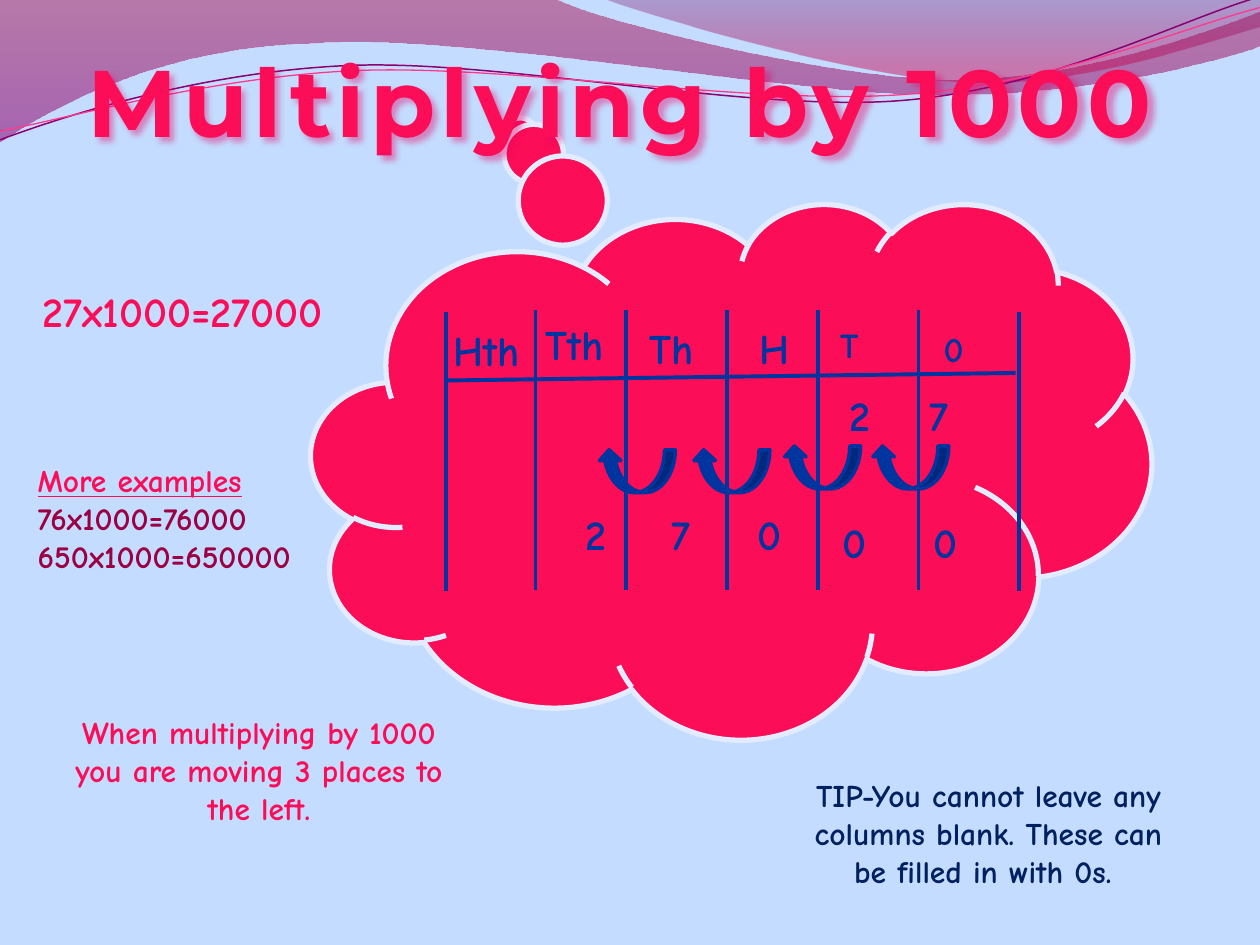
from dataclasses import dataclass
from math import cos, radians, sin

from lxml import etree
from pptx import Presentation
from pptx.dml.color import RGBColor
from pptx.enum.shapes import MSO_CONNECTOR, MSO_SHAPE
from pptx.enum.text import MSO_ANCHOR, MSO_AUTO_SIZE, PP_ALIGN
from pptx.oxml import parse_xml
from pptx.oxml.ns import nsdecls, qn
from pptx.util import Inches, Pt

STRAIGHT = MSO_CONNECTOR.STRAIGHT
CLOUD = MSO_SHAPE.CLOUD_CALLOUT
CURVED_ARROW = MSO_SHAPE.CURVED_UP_ARROW
LEFT, CENTER = PP_ALIGN.LEFT, PP_ALIGN.CENTER
TOP = MSO_ANCHOR.TOP
GROW = MSO_AUTO_SIZE.SHAPE_TO_FIT_TEXT


@dataclass(frozen=True)
class Theme:
    sky: str = "C3DCFF"
    pink: str = "FB0D57"
    cloud_edge: str = "E3ECFF"
    blue: str = "00349E"
    navy: str = "002060"
    plum: str = "9C0042"
    title_edge: str = "E90062"
    violet_line: str = "8A0070"
    rose_line: str = "FF388C"
    body_font: str = "Comic Neue"
    title_font: str = "Montserrat"
    title: int = 54
    digit: int = 24
    small_digit: int = 20
    note: int = 18


THEME = Theme()

BROAD_WAVE = [
    [(0, 0)], [(4.4, -0.01)],
    [(4.76, 0.17), (6.64, 0.63), (7.58, 0.63)],
    [(8.53, 0.63), (9.58, 0.26), (10, 0.09)], [(10.01, 0.36)],
    [(9.83, 0.44), (8.7, 0.76), (7.46, 0.75)],
    [(6.22, 0.75), (3.82, 0.28), (2.57, 0.34)],
    [(1.29, 0.36), (0.46, 0.83), (-0.01, 1.13)], [(0, 0)],
]
CORNER_WAVE = [
    [(4.79, -0.01)],
    [(5.09, 0.11), (6.82, 0.62), (7.69, 0.65)],
    [(8.56, 0.69), (9.61, 0.32), (10, 0.21)], [(10, 0)], [(4.79, -0.01)],
]
VIOLET_STRAND = [
    [(0, 1.11)],
    [(0.48, 0.93), (1.58, 0.57), (2.77, 0.52)],
    [(3.95, 0.47), (5.93, 0.89), (7.13, 0.8)],
    [(8.33, 0.71), (9.38, 0.15), (9.98, -0.02)],
]
ROSE_STRAND = [
    [(0, 1.04)],
    [(0.47, 0.96), (1.64, 0.61), (2.83, 0.56)],
    [(4.03, 0.51), (5.97, 0.84), (7.17, 0.75)],
    [(8.36, 0.67), (9.41, 0.21), (10, 0.06)],
]
STRAND_TILT = 2.7
STRAND_CENTER = (4.99, 0.58)

COLUMN_EDGES = [3.54, 4.25, 4.97, 5.77, 6.49, 7.29, 8.09]
HEADINGS = [
    ("0", 7.39, 2.55, 0.62, THEME.small_digit),
    ("T", 6.57, 2.52, 0.79, THEME.small_digit),
    ("H", 5.93, 2.51, 0.62, THEME.digit),
    ("Th", 5.06, 2.51, 0.8, THEME.digit),
    ("Tth", 4.23, 2.48, 0.83, THEME.digit),
    ("Hth", 3.5, 2.53, 0.83, THEME.digit),
]
START_DIGITS = [("2", 6.64, 3.04), ("7", 7.28, 3.04)]
RESULT_DIGITS = [
    ("7", 5.23, 3.99), ("2", 4.55, 3.99), ("0", 5.91, 3.99),
    ("0", 6.59, 4.05), ("0", 7.31, 4.05),
]
MOVES = [(6.92, 3.54), (6.22, 3.54), (5.5, 3.57), (4.75, 3.57)]


def rgb(color):
    return RGBColor.from_string(color)


def set_line(line, color, width):
    line.color.rgb = rgb(color)
    line.width = Pt(width)


def level(point):
    angle = radians(STRAND_TILT)
    x, y = (value - middle for value, middle in zip(point, STRAND_CENTER))
    return (STRAND_CENTER[0] + x * cos(angle) - y * sin(angle),
            STRAND_CENTER[1] + x * sin(angle) + y * cos(angle))


def add_curve(shapes, segments, close):
    segments = [[(Inches(x), Inches(y)) for x, y in segment] for segment in segments]
    start, *ends = [segment[-1] for segment in segments]
    builder = shapes.build_freeform(*start)
    builder.add_line_segments(ends, close=close)
    curve = builder.convert_to_shape()
    curve.shadow.inherit = False
    for step, segment in zip(list(curve.element.iter(qn("a:lnTo"))), segments[1:]):
        if len(segment) == 3:
            bend = etree.Element(qn("a:cubicBezTo"))
            for x, y in segment:
                etree.SubElement(bend, qn("a:pt"), x=str(x - curve.left), y=str(y - curve.top))
            step.getparent().replace(step, bend)
    return curve


def add_wave(shapes, segments, stops):
    wave = add_curve(shapes, segments, True)
    wave.line.fill.background()
    wave.fill.gradient()
    wave.fill.gradient_angle = 270
    for stop, (position, color, _) in zip(wave.fill.gradient_stops, stops):
        stop.position = position
        stop.color.rgb = rgb(color)
    for tint, (_, _, opacity) in zip(wave.element.spPr.iter(qn("a:srgbClr")), stops):
        etree.SubElement(tint, qn("a:alpha")).set("val", str(opacity * 1000))


def add_strand(shapes, segments, color, width):
    flat = [[level(point) for point in segment] for segment in segments]
    strand = add_curve(shapes, flat, False)
    strand.rotation = 360 - STRAND_TILT
    strand.fill.background()
    set_line(strand.line, color, width)


def add_preset(shapes, preset, box, fill, edge, width):
    shape = shapes.add_shape(preset, *map(Inches, box))
    shape.shadow.inherit = False
    shape.fill.solid()
    shape.fill.fore_color.rgb = rgb(fill)
    set_line(shape.line, edge, width)
    return shape


def add_rule(shapes, start, end):
    rule = shapes.add_connector(STRAIGHT, *map(Inches, (*start, *end)))
    set_line(rule.line, THEME.blue, 2.25)
    etree.SubElement(rule.element.spPr, qn("a:effectLst"))


def add_run(paragraph, text, size, color, font=THEME.body_font, underline=None):
    run = paragraph.add_run()
    run.text = text
    run.font.size = Pt(size)
    run.font.name = font
    run.font.bold = True
    run.font.underline = underline
    run.font.color.rgb = rgb(color)
    return run


def add_text(shapes, box, lines, size, align=LEFT):
    frame = shapes.add_textbox(*map(Inches, box)).text_frame
    frame.word_wrap = True
    frame.auto_size = GROW
    for index, (text, color, underline) in enumerate(lines):
        paragraph = frame.add_paragraph() if index else frame.paragraphs[0]
        paragraph.alignment = align
        add_run(paragraph, text, size, color, underline=underline)


def add_title(slide, text):
    title = slide.shapes.title
    title.left, title.top, title.width, title.height = map(Inches, (0.4, 0.29, 9.05, 1.01))
    title.element.getparent().append(title.element)
    title.fill.background()
    title.element.spPr.append(parse_xml(
        f'<a:effectLst {nsdecls("a")}><a:outerShdw blurRad="38100" dist="38100" dir="2700000">'
        f'<a:srgbClr val="{THEME.title_edge}"><a:alpha val="40000"/></a:srgbClr>'
        '</a:outerShdw></a:effectLst>'))
    frame = title.text_frame
    frame.word_wrap = False
    frame.auto_size = GROW
    frame.vertical_anchor = TOP
    frame.paragraphs[0].alignment = CENTER
    run = add_run(frame.paragraphs[0], text, THEME.title, THEME.pink, THEME.title_font)
    props = run.font._element
    props.set("spc", "300")
    props.insert(0, parse_xml(
        f'<a:ln {nsdecls("a")} w="28575"><a:solidFill>'
        f'<a:srgbClr val="{THEME.title_edge}"/></a:solidFill></a:ln>'))


def add_place_value_grid(shapes):
    for edge in COLUMN_EDGES:
        outer = edge in (COLUMN_EDGES[0], COLUMN_EDGES[-1])
        top, bottom = (2.48, 4.69) if outer else (2.46, 4.68)
        add_rule(shapes, (edge, top), (edge, bottom))
    add_rule(shapes, (8.06, 2.96), (3.54, 3.02))
    for text, left, top, width, size in HEADINGS:
        height = 0.5 if size == THEME.digit else 0.44
        add_text(shapes, (left, top, width, height), [(text, THEME.blue, None)], size)


def add_digits(shapes, digits):
    for text, left, top in digits:
        add_text(shapes, (left, top, 0.55, 0.5), [(text, THEME.blue, None)], THEME.digit)


def add_moves(shapes):
    for left, top in MOVES:
        arrow = add_preset(shapes, CURVED_ARROW, (left, top, 0.61, 0.34), THEME.blue, THEME.blue, 2)
        arrow.element.spPr.find(qn("a:xfrm")).set("flipH", "1")


def main():
    deck = Presentation()
    deck.slide_width, deck.slide_height = Inches(10), Inches(7.5)
    slide = deck.slides.add_slide(deck.slide_layouts[5])
    slide.background.fill.solid()
    slide.background.fill.fore_color.rgb = rgb(THEME.sky)
    shapes = slide.shapes

    add_wave(shapes, BROAD_WAVE, [(0, "A90042", 45), (1, "8E0073", 55)])
    add_wave(shapes, CORNER_WAVE, [(0, "73005E", 30), (0.8, "C9004F", 45)])
    strands = shapes.add_group_shape().shapes
    add_strand(strands, VIOLET_STRAND, THEME.violet_line, 0.85)
    add_strand(strands, ROSE_STRAND, THEME.rose_line, 0.75)

    cloud = add_preset(shapes, CLOUD, (2.47, 1.61, 6.67, 4.25), THEME.pink, THEME.cloud_edge, 3)
    cloud.adjustments[0], cloud.adjustments[1] = -0.251, -0.631
    add_place_value_grid(shapes.add_group_shape().shapes)
    add_title(slide, "Multiplying by 1000")

    add_text(shapes, (0.44, 5.61, 3.23, 1.01), [
        ("When multiplying by 1000 you are moving 3 places to the left.", THEME.pink, None),
    ], THEME.note, CENTER)
    add_text(shapes, (6.23, 6.11, 3.23, 1.31), [
        ("TIP-You cannot leave any columns blank. These can be filled in with 0s. ", THEME.navy, None),
    ], THEME.note, CENTER)
    add_text(shapes, (0.2, 3.61, 2.57, 1.31), [
        ("More examples", THEME.pink, True),
        ("76x1000=76000", THEME.plum, None),
        ("650x1000=650000", THEME.plum, None),
    ], THEME.note)
    add_digits(shapes, START_DIGITS)
    add_moves(shapes)
    add_digits(shapes, RESULT_DIGITS)
    add_text(shapes, (0.24, 2.22, 2.84, 0.5), [("27x1000=27000", THEME.pink, None)], THEME.digit)
    deck.save("out.pptx")


if __name__ == "__main__":
    main()
